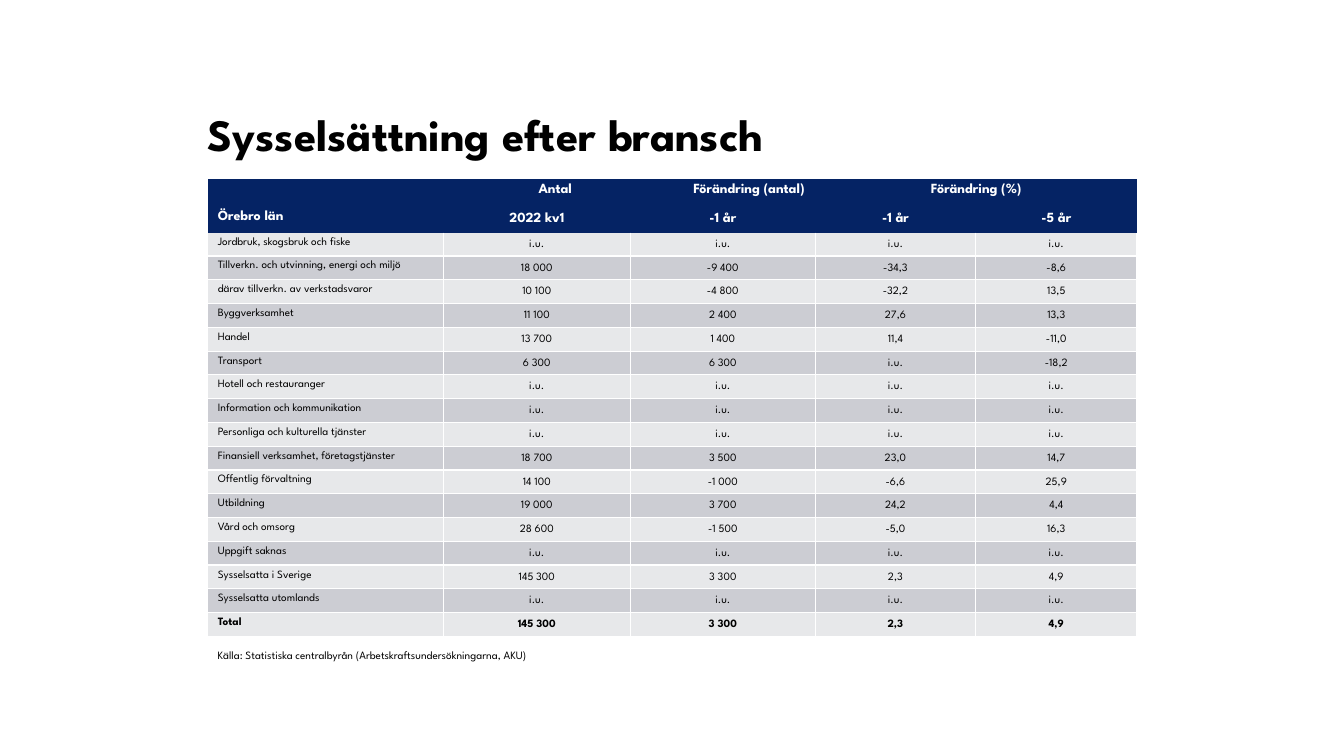
from lxml import etree
from pptx import Presentation
from pptx import util as u
from pptx.dml.color import RGBColor
from pptx.enum import text
from pptx.oxml.ns import qn

Pt = u.Pt
FONT = "League Spartan"
COLORS = {"navy": "052364", "light": "E7E8EA", "dark": "CCCDD3",
          "white": "FFFFFF", "black": "000000"}
NO_STYLE = "{2D5ABB26-0587-4C30-8999-92F81FD0307C}"
COLUMNS = [168.2, 133.8, 132, 114.6, 115.2]
HEADER_HEIGHT, FIRST_HEIGHT, ROW_HEIGHT = 16.4, 14.6, 17
HEADER_TABS = [60.9, 171.4]
HEADINGS = ["Örebro län", "2022 kv1", "-1 år", "-1 år", "-5 år"]
MISSING = ["i.u."] * 4
INDUSTRIES = [
    ("Jordbruk, skogsbruk och fiske", MISSING),
    ("Tillverkn. och utvinning, energi och miljö", ["18 000", "-9 400", "-34,3", "-8,6"]),
    ("därav tillverkn. av verkstadsvaror", ["10 100", "-4 800", "-32,2", "13,5"]),
    ("Byggverksamhet", ["11 100", "2 400", "27,6", "13,3"]),
    ("Handel", ["13 700", "1 400", "11,4", "-11,0"]),
    ("Transport", ["6 300", "6 300", "i.u.", "-18,2"]),
    ("Hotell och restauranger", MISSING),
    ("Information och kommunikation", MISSING),
    ("Personliga och kulturella tjänster", MISSING),
    ("Finansiell verksamhet, företagstjänster", ["18 700", "3 500", "23,0", "14,7"]),
    ("Offentlig förvaltning", ["14 100", "-1 000", "-6,6", "25,9"]),
    ("Utbildning", ["19 000", "3 700", "24,2", "4,4"]),
    ("Vård och omsorg", ["28 600", "-1 500", "-5,0", "16,3"]),
    ("Uppgift saknas", MISSING),
    ("Sysselsatta i Sverige", ["145 300", "3 300", "2,3", "4,9"]),
    ("Sysselsatta utomlands", MISSING),
    ("Total", ["145 300", "3 300", "2,3", "4,9"]),
]


def style_paragraph(p, size, color, bold=False, align=text.PP_ALIGN.LEFT):
    p.alignment = align
    p.font.name = FONT
    p.font.size = Pt(size)
    p.font.bold = bold
    p.font.color.rgb = RGBColor.from_string(COLORS[color])


def add_text(s, box, words, size, bold=False, inset=(0, 0), wrap=True,
             anchor=text.MSO_ANCHOR.TOP):
    tf = s.shapes.add_textbox(*map(Pt, box)).text_frame
    tf.word_wrap = wrap
    tf.vertical_anchor = anchor
    tf.margin_left = tf.margin_right = Pt(inset[0])
    tf.margin_top = tf.margin_bottom = Pt(inset[1])
    p = tf.paragraphs[0]
    p.text = words
    style_paragraph(p, size, "black", bold)


def add_borders(cell, sides):
    tcPr = cell._tc.get_or_add_tcPr()
    for i, side in enumerate(sides):
        ln = etree.Element(qn(f"a:ln{side}"), w=str(Pt(1)))
        solid = etree.SubElement(ln, qn("a:solidFill"))
        etree.SubElement(solid, qn("a:srgbClr"), val=COLORS["white"])
        tcPr.insert(i, ln)


def fill_cell(cell, words, fill, size, color, bold=False, centered=False, middle=False):
    cell.fill.solid()
    cell.fill.fore_color.rgb = RGBColor.from_string(COLORS[fill])
    if middle:
        cell.vertical_anchor = text.MSO_ANCHOR.MIDDLE
        cell.margin_left = cell.margin_right = cell.margin_top = Pt(0.7)
        cell.margin_bottom = Pt(0)
    p = cell.text_frame.paragraphs[0]
    if words:
        p.text = words
    else:
        etree.SubElement(p._p, qn("a:endParaRPr"), sz=str(size * 100))
    align = text.PP_ALIGN.CENTER if centered else text.PP_ALIGN.LEFT
    style_paragraph(p, size, color, bold, align)
    return p


def add_header(table):
    table.cell(0, 1).merge(table.cell(0, 2))
    table.cell(0, 3).merge(table.cell(0, 4))
    groups = ["", "\tAntal\tFörändring (antal)", "", "Förändring (%)", ""]
    for c, words in enumerate(groups):
        p = fill_cell(table.cell(0, c), words, "navy", 10, "white", True, c == 3)
        if c == 1:
            tabs = etree.Element(qn("a:tabLst"))
            for pos in HEADER_TABS:
                etree.SubElement(tabs, qn("a:tab"), pos=str(Pt(pos)), algn="l")
            p._p.get_or_add_pPr().insert(0, tabs)
    for c, words in enumerate(HEADINGS):
        fill_cell(table.cell(1, c), words, "navy", 10, "white", True, c > 0, c > 0)


def add_industry_table(s, left, top):
    heights = [HEADER_HEIGHT] * 2 + [FIRST_HEIGHT] + [ROW_HEIGHT] * (len(INDUSTRIES) - 1)
    frame = s.shapes.add_table(len(heights), len(COLUMNS), Pt(left), Pt(top),
                               Pt(sum(COLUMNS)), Pt(sum(heights)))
    table = frame.table
    table.first_row = table.horz_banding = False
    table._tbl.tblPr.find(qn("a:tableStyleId")).text = NO_STYLE
    for column, width in zip(table.columns, COLUMNS):
        column.width = Pt(width)
    for row, height in zip(table.rows, heights):
        row.height = Pt(height)
    add_header(table)
    for i, (industry, values) in enumerate(INDUSTRIES):
        for c, words in enumerate([industry] + values):
            cell = table.cell(i + 2, c)
            fill_cell(cell, words, "dark" if i % 2 else "light", 8, "black",
                      industry == "Total", c > 0, c > 0)
            add_borders(cell, ("L" if c else "") + "R" + ("T" if i else "") + "B")


def build_slide(prs, left=148.4, width=663.8):
    s = prs.slides.add_slide(prs.slide_layouts[6])
    add_text(s, (left, 26.6, width, 87.8), "Sysselsättning efter bransch", 32,
             bold=True, anchor=text.MSO_ANCHOR.BOTTOM)
    add_industry_table(s, left, 127.6)
    add_text(s, (left, 459.4, 273.6, 17),
             "Källa: Statistiska centralbyrån (Arbetskraftsundersökningarna, AKU)",
             8, inset=(7.2, 3.6), wrap=False)


def main():
    prs = Presentation()
    prs.slide_width, prs.slide_height = Pt(960), Pt(540)
    build_slide(prs)
    prs.save("out.pptx")


if __name__ == "__main__":
    main()
